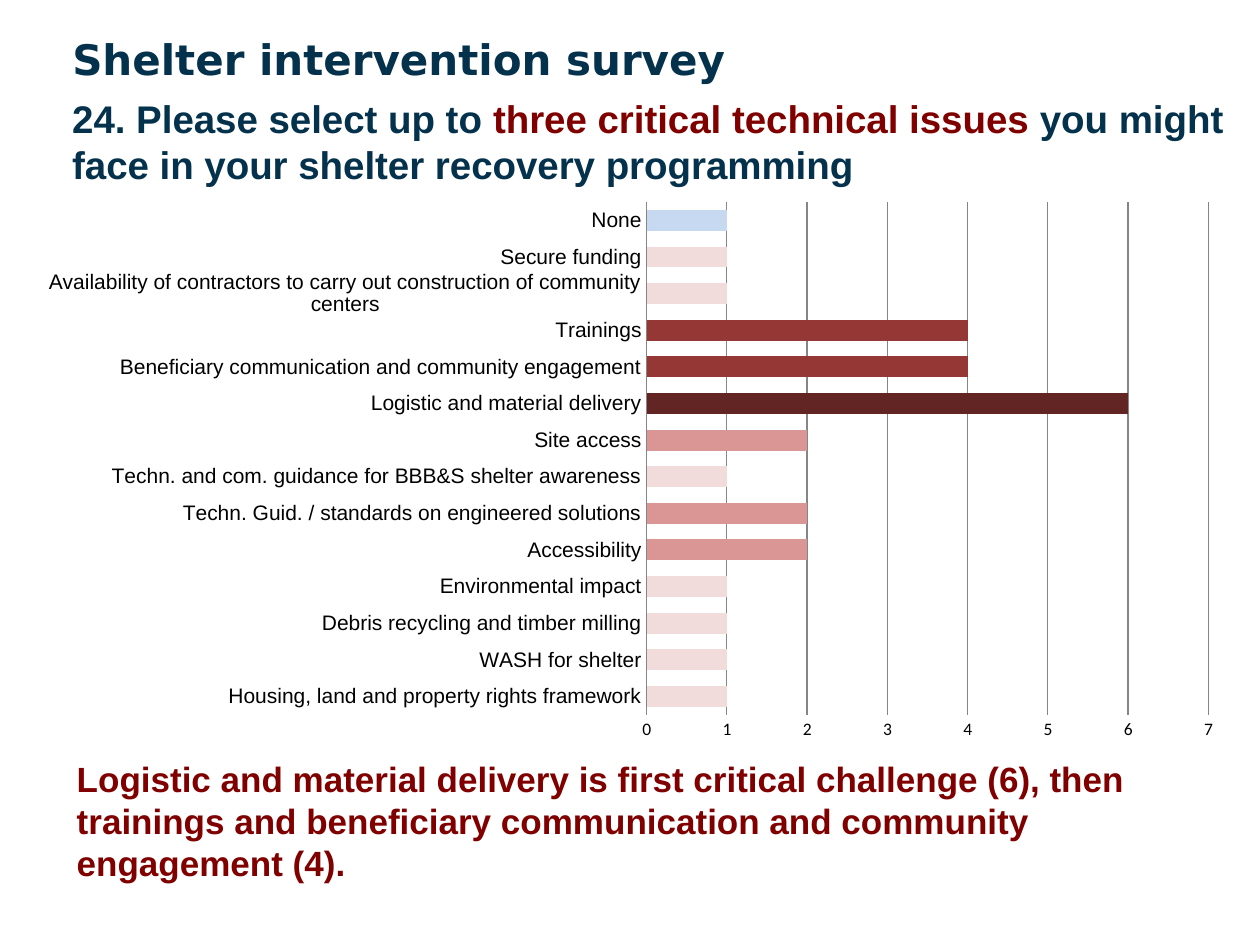
from lxml.etree import SubElement
from pptx import Presentation
from pptx.chart.data import CategoryChartData
from pptx.dml.color import RGBColor
from pptx.enum.chart import XL_CHART_TYPE, XL_TICK_MARK
from pptx.enum.text import MSO_ANCHOR
from pptx.oxml.ns import qn
from pptx.util import Pt

NAVY = RGBColor(0x04, 0x31, 0x4C)
MAROON = RGBColor(0x80, 0x00, 0x00)
BLACK = RGBColor(0x00, 0x00, 0x00)
GRID_GREY = RGBColor(0x86, 0x86, 0x86)
SPARE_BLUE = RGBColor(0x4F, 0x81, 0xBD)
NONE_BLUE = RGBColor(0xC6, 0xD9, 0xF1)
VOTE_COLORS = {
    1: RGBColor(0xF2, 0xDC, 0xDB),
    2: RGBColor(0xD9, 0x96, 0x94),
    4: RGBColor(0x95, 0x37, 0x35),
    6: RGBColor(0x63, 0x25, 0x23),
}

VOTES = [
    ("Housing, land and property rights framework", 1),
    ("WASH for shelter", 1),
    ("Debris recycling and timber milling", 1),
    ("Environmental impact", 1),
    ("Accessibility", 2),
    ("Techn. Guid. / standards on engineered solutions", 2),
    ("Techn. and com. guidance for BBB&S shelter awareness", 1),
    ("Site access", 2),
    ("Logistic and material delivery", 6),
    ("Beneficiary communication and community engagement", 4),
    ("Trainings", 4),
    ("Availability of contractors to carry out construction of community centers", 1),
    ("Secure funding", 1),
    ("None", 1),
]
QUESTION = [
    ("24. Please select up to ", NAVY),
    ("three critical technical issues ", MAROON),
    ("you might face in your shelter recovery programming", NAVY),
]
FINDING = (
    "Logistic and material delivery is first critical challenge (6), then "
    "trainings and beneficiary communication and community engagement (4)."
)


def add_text(page, box, spans, size, font="Arial", anchor=MSO_ANCHOR.MIDDLE, before=0):
    """Place one bold paragraph of coloured spans in the box."""
    frame = page.shapes.add_textbox(*map(Pt, box)).text_frame
    frame.word_wrap = True
    frame.vertical_anchor = anchor
    para = frame.paragraphs[0]
    para.space_before = Pt(before)
    for text, color in spans:
        span = para.add_run()
        span.text = text
        span.font.name = font
        span.font.size = Pt(size)
        span.font.bold = True
        span.font.color.rgb = color


def set_plot_area(chart, size, inner):
    """Fix the inner plot box, in points, within a chart of the given size."""
    area = chart._chartSpace.chart.plotArea
    for old in area.findall(qn("c:layout")):
        area.remove(old)
    layout = SubElement(area, qn("c:layout"))
    area.insert(0, layout)
    manual = SubElement(layout, qn("c:manualLayout"))
    SubElement(manual, qn("c:layoutTarget")).set("val", "inner")
    for name in ("xMode", "yMode"):
        SubElement(manual, qn(f"c:{name}")).set("val", "edge")
    for name, length, whole in zip("xywh", inner, size * 2):
        SubElement(manual, qn(f"c:{name}")).set("val", str(length / whole))


def paint(target, color):
    """Give a series or point a solid fill."""
    target.format.fill.solid()
    target.format.fill.fore_color.rgb = color


def add_vote_chart(page, box):
    """Place the bar chart of votes, each bar shaded by its count."""
    data = CategoryChartData()
    data.categories = [issue for issue, count in VOTES]
    data.add_series("Series 1", [])
    data.add_series("Series 2", [count for issue, count in VOTES])
    chart = page.shapes.add_chart(
        XL_CHART_TYPE.BAR_CLUSTERED, *map(Pt, box), data
    ).chart
    chart.has_legend = False
    chart.has_title = False
    chart.font.name = "Calibri"
    chart.font.size = Pt(10)
    chart.font.color.rgb = BLACK
    set_plot_area(chart, box[2:], (355, 6, 321, 293))

    plot = chart.plots[0]
    plot.gap_width = 75
    plot.overlap = -25
    plot.vary_by_categories = False
    spare, votes = plot.series
    spare._element.remove(spare._element.find(qn("c:val")))
    paint(spare, SPARE_BLUE)
    paint(votes, VOTE_COLORS[6])
    for index, (issue, count) in enumerate(VOTES):
        if count != 6:
            paint(votes.points[index], NONE_BLUE if issue == "None" else VOTE_COLORS[count])

    for axis in (chart.category_axis, chart.value_axis):
        axis.major_tick_mark = XL_TICK_MARK.NONE
        axis.minor_tick_mark = XL_TICK_MARK.NONE
    issues, counts = chart.category_axis, chart.value_axis
    issues.tick_labels.font.name = "Arial"
    issues.tick_labels.font.size = Pt(12)
    issues.format.line.color.rgb = GRID_GREY
    counts.minimum_scale = 0
    counts.maximum_scale = 7
    counts.major_unit = 1
    counts.has_major_gridlines = True
    counts.major_gridlines.format.line.color.rgb = GRID_GREY
    counts.format.line.fill.background()


def build_survey_page(deck):
    """Build the survey page with its question, chart and finding."""
    page = deck.slides.add_slide(deck.slide_layouts[6])
    add_text(page, (34.2, 52, 673, 57), QUESTION, 22)
    add_text(page, (34.2, 0, 686, 67), [("Shelter intervention survey", NAVY)], 24, "DejaVu Sans")
    add_text(page, (36.8, 429.5, 673, 209), [(FINDING, MAROON)], 20, anchor=MSO_ANCHOR.TOP, before=4)
    add_vote_chart(page, (14.5, 109.5, 692.5, 320.5))


def main():
    """Create and save the deck."""
    deck = Presentation()
    deck.slide_width, deck.slide_height = Pt(720), Pt(540)
    build_survey_page(deck)
    deck.save("out.pptx")


if __name__ == "__main__":
    main()
